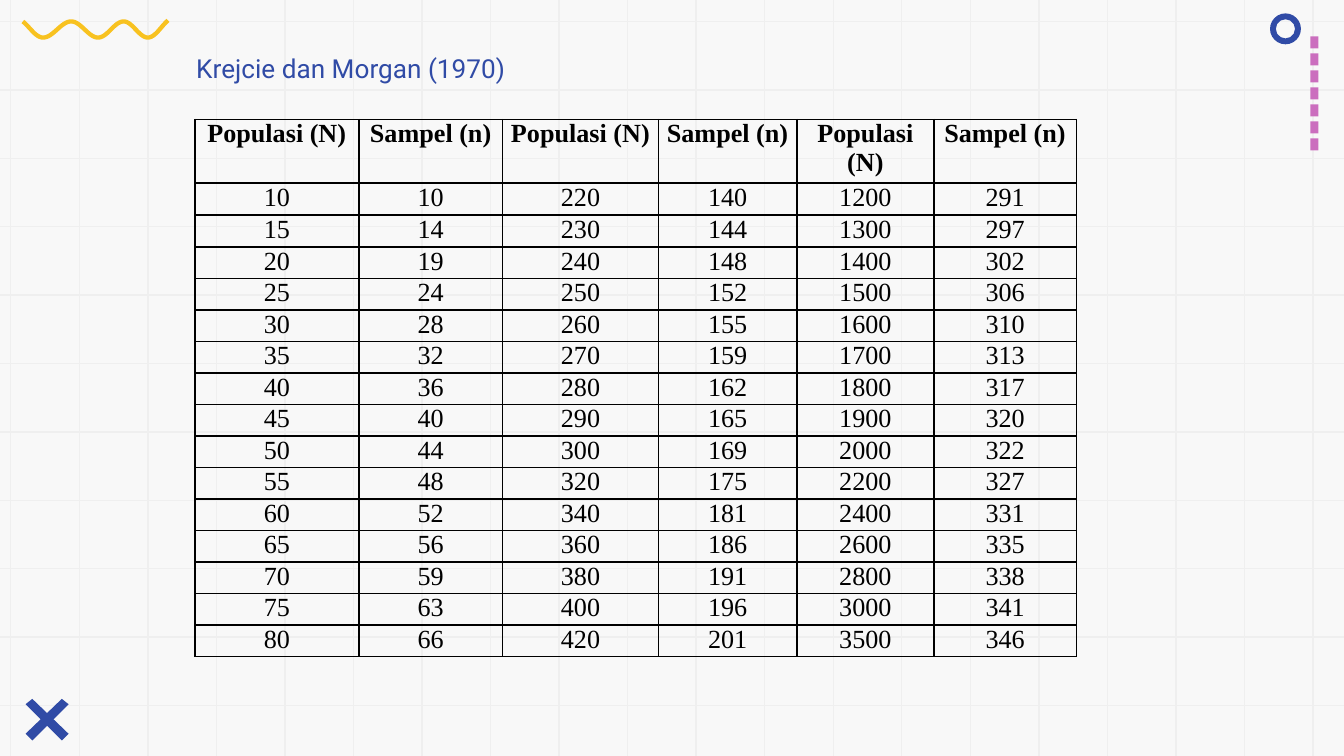
from math import cos, hypot, pi
from lxml.etree import SubElement
from pptx import Presentation
from pptx.dml.color import RGBColor
from pptx.enum.shapes import MSO_CONNECTOR, MSO_SHAPE
from pptx.enum.text import MSO_ANCHOR, PP_ALIGN
from pptx.oxml.ns import qn
from pptx.util import Inches, Pt

BLUE, PINK, YELLOW, GRID, BLACK = "304BA6", "CB6EBE", "F8C220", "EFEFEF", "000000"
SLIDE_WIDTH, SLIDE_HEIGHT = 10, 5.25 + 0.375


def color(hex_value):
    return RGBColor.from_string(hex_value)


def paint(shape, hex_value):
    shape.shadow.inherit = False
    shape.fill.solid()
    shape.fill.fore_color.rgb = color(hex_value)
    shape.line.fill.background()


presentation = Presentation()
presentation.slide_width = Inches(SLIDE_WIDTH)
presentation.slide_height = Inches(SLIDE_HEIGHT)
slide = presentation.slides.add_slide(presentation.slide_layouts[5])
shapes = slide.shapes
slide.background.fill.solid()
slide.background.fill.fore_color.rgb = color("F8F8F8")

row_lines = [0.16 + i * 5.09 / 10 for i in range(11)]
column_lines = [0.08 + i * 9.69 / 19 for i in range(20)]
grid_lines = [(SLIDE_WIDTH, y, 0, y) for y in row_lines]
grid_lines += [(x, 0, x, SLIDE_HEIGHT) for x in column_lines]
for ends in grid_lines:
    grid_line = shapes.add_connector(MSO_CONNECTOR.STRAIGHT, *[Inches(end) for end in ends])
    grid_line.line.color.rgb = color(GRID)
    grid_line.line.width = Pt(0.75)
    SubElement(grid_line._element.spPr, qn("a:effectLst"))

for i in range(7):
    dash = shapes.add_shape(MSO_SHAPE.RECTANGLE, Inches(9.75), Inches(0.27 + i * 0.76 / 6),
                            Inches(0.06), Inches(0.09))
    paint(dash, PINK)

wave_turns = [(0.12, 0.14), (0.32, 0.28), (0.53, 0.16), (0.73, 0.28),
              (0.92, 0.16), (1.1, 0.28), (1.3, 0.13)]
center = []
for (x1, y1), (x2, y2) in zip(wave_turns, wave_turns[1:]):
    for i in range(16):
        x = x1 + (x2 - x1) * i / 16
        if 0.16 <= x <= 1.26:
            center.append((x, y1 + (y2 - y1) * (1 - cos(pi * i / 16)) / 2))
upper, lower = [], []
for i, (x, y) in enumerate(center):
    before, after = center[max(i - 1, 0)], center[min(i + 1, len(center) - 1)]
    run, rise = after[0] - before[0], after[1] - before[1]
    shift_x, shift_y = (0.016 * part / hypot(run, rise) for part in (rise, -run))
    upper.append((x + shift_x, y + shift_y))
    lower.append((x - shift_x, y - shift_y))

outlines = [
    ([(0.24, 5.2), (0.19, 5.24), (0.46, 5.51), (0.51, 5.46)], BLUE),
    ([(0.46, 5.2), (0.19, 5.46), (0.24, 5.51), (0.51, 5.24)], BLUE),
    (upper + lower[::-1], YELLOW),
]
for points, fill in outlines:
    corners = [(Inches(x), Inches(y)) for x, y in points]
    builder = shapes.build_freeform(*corners[0])
    builder.add_line_segments(corners[1:], close=True)
    paint(builder.convert_to_shape(), fill)

ring = shapes.add_shape(MSO_SHAPE.DONUT, Inches(9.45), Inches(0.1), Inches(0.23), Inches(0.23))
ring.adjustments[0] = 0.19
paint(ring, BLUE)

title = shapes.title
shapes._spTree.append(title._element)
title.left, title.top, title.width, title.height = Inches(1.36), Inches(0.34), Inches(5), Inches(0.34)
title.text_frame.word_wrap = True
title.text_frame.vertical_anchor = MSO_ANCHOR.TOP
paragraph = title.text_frame.paragraphs[0]
paragraph.alignment = PP_ALIGN.LEFT
run = paragraph.add_run()
run.text = "Krejcie dan Morgan (1970)"
run.font.size = Pt(14)
run.font.name = "Roboto"
run.font.color.rgb = color(BLUE)

columns = [
    [10, 15, 20, 25, 30, 35, 40, 45, 50, 55, 60, 65, 70, 75, 80],
    [10, 14, 19, 24, 28, 32, 36, 40, 44, 48, 52, 56, 59, 63, 66],
    [220, 230, 240, 250, 260, 270, 280, 290, 300, 320, 340, 360, 380, 400, 420],
    [140, 144, 148, 152, 155, 159, 162, 165, 169, 175, 181, 186, 191, 196, 201],
    [1200, 1300, 1400, 1500, 1600, 1700, 1800, 1900, 2000, 2200, 2400, 2600, 2800, 3000, 3500],
    [291, 297, 302, 306, 310, 313, 317, 320, 322, 327, 331, 335, 338, 341, 346],
]
rows = [["Populasi (N)", "Sampel (n)"] * 3, *zip(*columns)]
column_widths = [1.22, 1.07, 1.16, 1.03, 1.02, 1.06]
row_heights = [0.47, 0.24, 0.24] + [3.05 / 13] * 13
table = shapes.add_table(len(rows), len(column_widths), Inches(1.45), Inches(0.89),
                         Inches(sum(column_widths)), Inches(sum(row_heights))).table
table.first_row = False
table.horz_banding = False
for column, width in zip(table.columns, column_widths):
    column.width = Inches(width)
for row_index, values in enumerate(rows):
    table.rows[row_index].height = Inches(row_heights[row_index])
    for column_index, value in enumerate(values):
        cell = table.cell(row_index, column_index)
        cell.margin_left = cell.margin_right = Inches(0.03)
        cell.margin_top = cell.margin_bottom = 0
        paragraph = cell.text_frame.paragraphs[0]
        paragraph.alignment = PP_ALIGN.CENTER
        run = paragraph.add_run()
        run.text = str(value)
        run.font.size = Pt(14)
        run.font.name = "Times New Roman"
        run.font.bold = row_index == 0
        run.font.color.rgb = color(BLACK)
        properties = cell._tc.get_or_add_tcPr()
        for side in ("a:lnL", "a:lnR", "a:lnT", "a:lnB"):
            border = SubElement(properties, qn(side), w=str(Pt(1)))
            SubElement(SubElement(border, qn("a:solidFill")), qn("a:srgbClr"), val=BLACK)
        SubElement(properties, qn("a:noFill"))

presentation.save("out.pptx")
